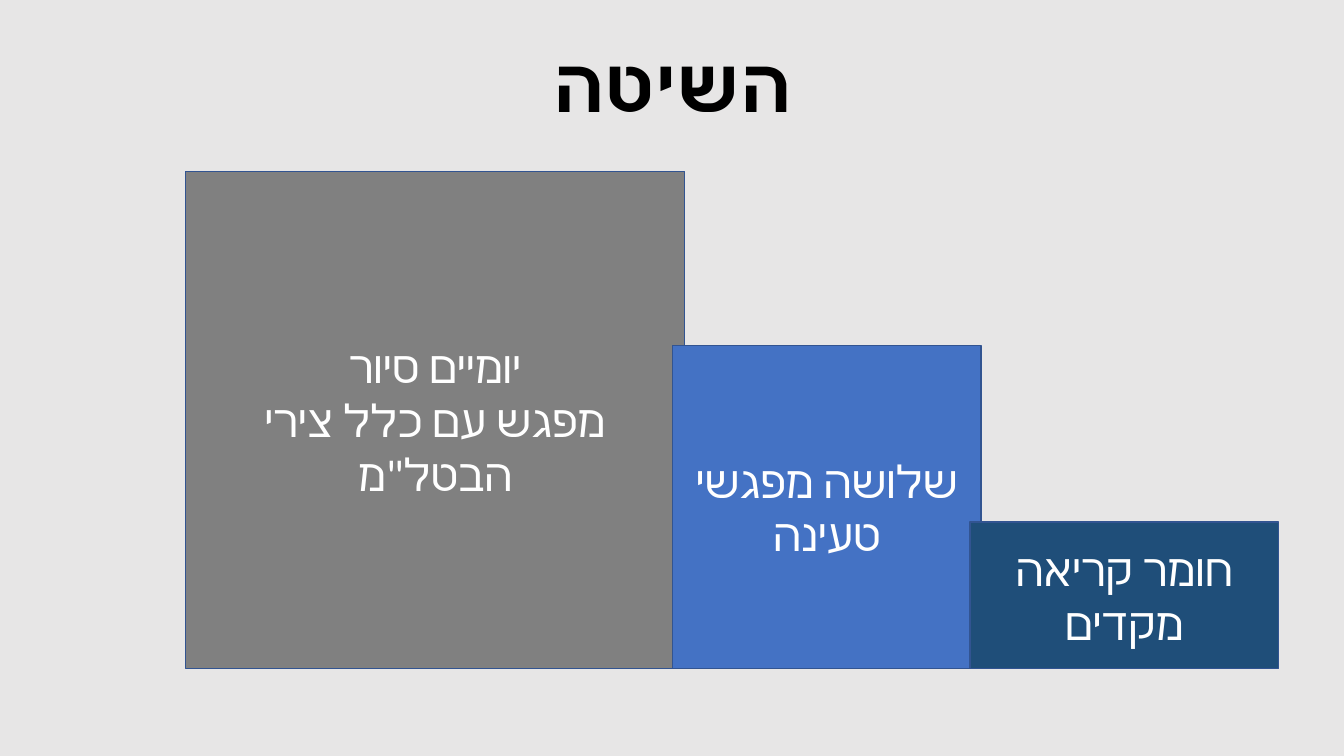
from lxml.etree import SubElement
from pptx import Presentation
from pptx.dml.color import RGBColor
from pptx.enum.shapes import MSO_SHAPE
from pptx.enum.text import MSO_ANCHOR, PP_ALIGN
from pptx.oxml.ns import qn
from pptx.util import Inches, Pt

COLORS = {
    "background": "E7E6E6",
    "title": "000000",
    "text": "FFFFFF",
    "outline": "325491",
    "tour": "808080",
    "sessions": "4472C4",
    "reading": "1F4E79",
}
BASELINE = 6.63


def color(name):
    return RGBColor.from_string(COLORS[name])


def write_text(shape, text, size=32, color_name="text", bold=False, spacing=None):
    frame = shape.text_frame
    frame.word_wrap = True
    frame.vertical_anchor = MSO_ANCHOR.MIDDLE
    frame.text = text
    for paragraph in frame.paragraphs:
        paragraph.alignment = PP_ALIGN.CENTER
        paragraph.line_spacing = spacing
        paragraph._p.get_or_add_pPr().set("rtl", "1")
        for run in paragraph.runs:
            font = run.font
            font.name = "Calibri"
            font.size = Pt(size)
            font.bold = bold
            font.color.rgb = color(color_name)
            SubElement(run._r.get_or_add_rPr(), qn("a:cs"), typeface="Calibri")


class StepSlide:
    """Draws a title and steps that stand on a common baseline."""

    def __init__(self, presentation):
        self.slide = presentation.slides.add_slide(presentation.slide_layouts[6])
        fill = self.slide.background.fill
        fill.solid()
        fill.fore_color.rgb = color("background")

    def add_title(self, text):
        shape = self.slide.shapes.add_textbox(
            Inches(0.92), Inches(0.15), Inches(11.5), Inches(1.45))
        write_text(shape, text, size=54, color_name="title", bold=True, spacing=0.9)

    def add_step(self, text, left, width, height, fill_name):
        shape = self.slide.shapes.add_shape(
            MSO_SHAPE.RECTANGLE, Inches(left), Inches(BASELINE - height),
            Inches(width), Inches(height))
        shape.shadow.inherit = False
        shape.fill.solid()
        shape.fill.fore_color.rgb = color(fill_name)
        shape.line.color.rgb = color("outline")
        shape.line.width = Pt(1)
        write_text(shape, text)


def main():
    presentation = Presentation()
    presentation.slide_width = Inches(13.33)
    presentation.slide_height = Inches(7.5)
    slide = StepSlide(presentation)
    slide.add_title("השיטה")
    steps = [
        ("יומיים סיור\nמפגש עם כלל צירי הבטל\"מ", 1.84, 4.95, 4.93, "tour"),
        ("שלושה מפגשי טעינה", 6.67, 3.06, 3.2, "sessions"),
        ("חומר קריאה מקדים", 9.62, 3.06, 1.45, "reading"),
    ]
    for step in steps:
        slide.add_step(*step)
    presentation.save("out.pptx")


if __name__ == "__main__":
    main()
